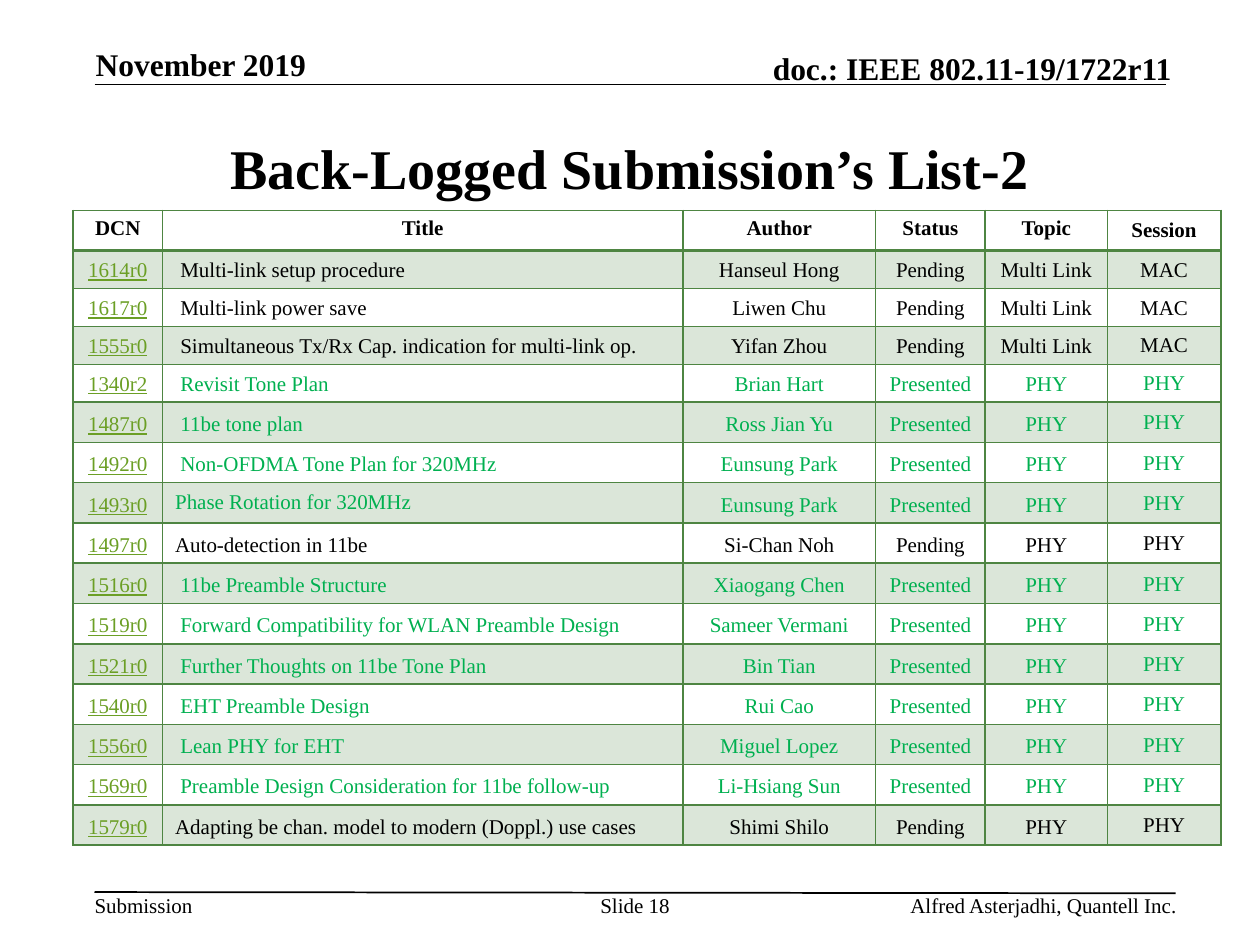
from pptx import Presentation
from pptx.dml.color import RGBColor
from pptx.enum.text import MSO_ANCHOR as Anchor, PP_ALIGN as Align
from pptx.oxml.ns import qn
from pptx.oxml.xmlchemy import OxmlElement
from pptx.util import Inches, Pt

FONT = "Times New Roman"
BLACK = RGBColor(0x00, 0x00, 0x00)
GREEN = RGBColor(0x4E, 0x85, 0x42)
LINK_GREEN = RGBColor(0x6B, 0x9F, 0x25)
PRESENTED_GREEN = RGBColor(0x00, 0xB0, 0x50)
BAND_ALPHA = 20000

# Text boxes: text, (left, top, width, height), size, bold, alignment, anchor
TEXTS = [
    ("doc.: IEEE 802.11-19/1722r11", (5.47, 0.39, 3.83, 0.3), 18, True, Align.RIGHT, Anchor.BOTTOM),
    ("November 2019", (0.76, 0.36, 2.05, 0.3), 18, True, Align.LEFT, Anchor.BOTTOM),
    ("Back-Logged Submission’s List-2", (0.75, 0.75, 8.5, 1.16), 32, True, Align.CENTER, Anchor.MIDDLE),
    ("Submission", (0.75, 7.08, 0.78, 0.2), 12, False, Align.LEFT, Anchor.TOP),
    ("Slide 18", (4.75, 7.08, 0.58, 0.4), 12, False, Align.CENTER, Anchor.TOP),
    ("Alfred Asterjadhi, Quantell Inc.", (5.86, 7.08, 3.48, 0.2), 12, False, Align.RIGHT, Anchor.TOP),
]
# Header and footer rules: x1, y1, x2, y2
RULES = [(0.75, 0.67, 9.25, 0.67), (0.75, 7.08, 9.33, 7.09)]

HEADERS = ("DCN", "Title", "Author", "Status", "Topic", "Session")
SUBMISSIONS = [
    ("1614r0", " Multi-link setup procedure", "Hanseul Hong", "Pending", "Multi Link", "MAC"),
    ("1617r0", " Multi-link power save", "Liwen Chu", "Pending", "Multi Link", "MAC"),
    ("1555r0", " Simultaneous Tx/Rx Cap. indication for multi-link op.", "Yifan Zhou",
     "Pending", "Multi Link", "MAC"),
    ("1340r2", " Revisit Tone Plan", "Brian Hart", "Presented", "PHY", "PHY"),
    ("1487r0", " 11be tone plan", "Ross Jian Yu", "Presented", "PHY", "PHY"),
    ("1492r0", " Non-OFDMA Tone Plan for 320MHz", "Eunsung Park", "Presented", "PHY", "PHY"),
    ("1493r0", "Phase Rotation for 320MHz", "Eunsung Park", "Presented", "PHY", "PHY"),
    ("1497r0", "Auto-detection in 11be", "Si-Chan Noh", "Pending", "PHY", "PHY"),
    ("1516r0", " 11be Preamble Structure", "Xiaogang Chen", "Presented", "PHY", "PHY"),
    ("1519r0", " Forward Compatibility for WLAN Preamble Design", "Sameer Vermani",
     "Presented", "PHY", "PHY"),
    ("1521r0", " Further Thoughts on 11be Tone Plan", "Bin Tian", "Presented", "PHY", "PHY"),
    ("1540r0", " EHT Preamble Design", "Rui Cao", "Presented", "PHY", "PHY"),
    ("1556r0", " Lean PHY for EHT", "Miguel Lopez", "Presented", "PHY", "PHY"),
    ("1569r0", " Preamble Design Consideration for 11be follow-up", "Li-Hsiang Sun",
     "Presented", "PHY", "PHY"),
    ("1579r0", "Adapting be chan. model to modern (Doppl.) use cases", "Shimi Shilo",
     "Pending", "PHY", "PHY"),
]
COLUMN_WIDTHS = (0.71, 4.13, 1.53, 0.87, 0.97, 0.9)
ROW_HEIGHTS = [0.32] + [0.28] * 4 + [0.32] * 11
TITLE_COLUMN, SESSION_COLUMN = 1, 5
CENTRED_TITLE_DCN = "1493r0"


def style_text(text_frame, size, bold, color, alignment):
    paragraph = text_frame.paragraphs[0]
    paragraph.alignment = alignment
    font = paragraph.runs[0].font
    font.name, font.size, font.bold = FONT, Pt(size), bold
    font.color.rgb = color
    return font


def add_label(slide, text, box, size, bold, alignment, anchor):
    text_frame = slide.shapes.add_textbox(*map(Inches, box)).text_frame
    text_frame.margin_left = text_frame.margin_right = 0
    text_frame.margin_top = text_frame.margin_bottom = 0
    text_frame.word_wrap = True
    text_frame.vertical_anchor = anchor
    text_frame.text = text
    style_text(text_frame, size, bold, BLACK, alignment)


def add_rule(slide, ends):
    rule = slide.shapes.add_connector(1, *map(Inches, ends))
    rule.line.color.rgb = BLACK
    rule.line.width = Pt(1)
    rule._element.spPr.append(OxmlElement("a:effectLst"))


def set_borders(cell, top, bottom):
    properties = cell._tc.get_or_add_tcPr()
    for side, width in (("L", 1), ("R", 1), ("T", top), ("B", bottom)):
        line = OxmlElement(f"a:ln{side}")
        line.set("w", str(Pt(width)))
        fill = OxmlElement("a:solidFill")
        color = OxmlElement("a:srgbClr")
        color.set("val", str(GREEN))
        fill.append(color)
        line.append(fill)
        properties.append(line)


def set_band(cell, shaded):
    if not shaded:
        cell.fill.background()
        return
    cell.fill.solid()
    cell.fill.fore_color.rgb = GREEN
    alpha = OxmlElement("a:alpha")
    alpha.set("val", str(BAND_ALPHA))
    cell._tc.tcPr.find(qn("a:solidFill"))[0].append(alpha)


def cell_anchor(row, column, dcn):
    if column == SESSION_COLUMN or (column == TITLE_COLUMN and dcn == CENTRED_TITLE_DCN):
        return Anchor.MIDDLE
    return Anchor.TOP if row == 0 else Anchor.BOTTOM


def fill_cell(cell, row, column, record):
    is_header = row == 0
    cell.text = record[column]
    cell.vertical_anchor = cell_anchor(row, column, record[0])
    if column == SESSION_COLUMN and not is_header:
        cell.margin_left = cell.margin_right = cell.margin_top = Inches(0.01)
        cell.margin_bottom = 0

    is_link = column == 0 and not is_header
    color = PRESENTED_GREEN if "Presented" in record else BLACK
    alignment = Align.LEFT if column == TITLE_COLUMN and not is_header else Align.CENTER
    font = style_text(cell.text_frame, 12, is_header, LINK_GREEN if is_link else color, alignment)
    font.underline = is_link

    set_borders(cell, top=2 if row == 1 else 1, bottom=2 if is_header else 1)
    set_band(cell, shaded=row % 2 == 1)


def add_submission_table(slide):
    records = [HEADERS] + SUBMISSIONS
    table = slide.shapes.add_table(
        len(records), len(HEADERS), Inches(0.58), Inches(1.67),
        Inches(sum(COLUMN_WIDTHS)), Inches(sum(ROW_HEIGHTS))).table
    for column, width in zip(table.columns, COLUMN_WIDTHS):
        column.width = Inches(width)
    for row, height in zip(table.rows, ROW_HEIGHTS):
        row.height = Inches(height)
    for row, record in enumerate(records):
        for column in range(len(HEADERS)):
            fill_cell(table.cell(row, column), row, column, record)


def main():
    presentation = Presentation()
    presentation.slide_width, presentation.slide_height = Inches(10), Inches(7.5)
    slide = presentation.slides.add_slide(presentation.slide_layouts[6])

    # Header, title and footer
    for ends in RULES:
        add_rule(slide, ends)
    for label in TEXTS:
        add_label(slide, *label)

    # Submission list
    add_submission_table(slide)
    presentation.save("out.pptx")


if __name__ == "__main__":
    main()
